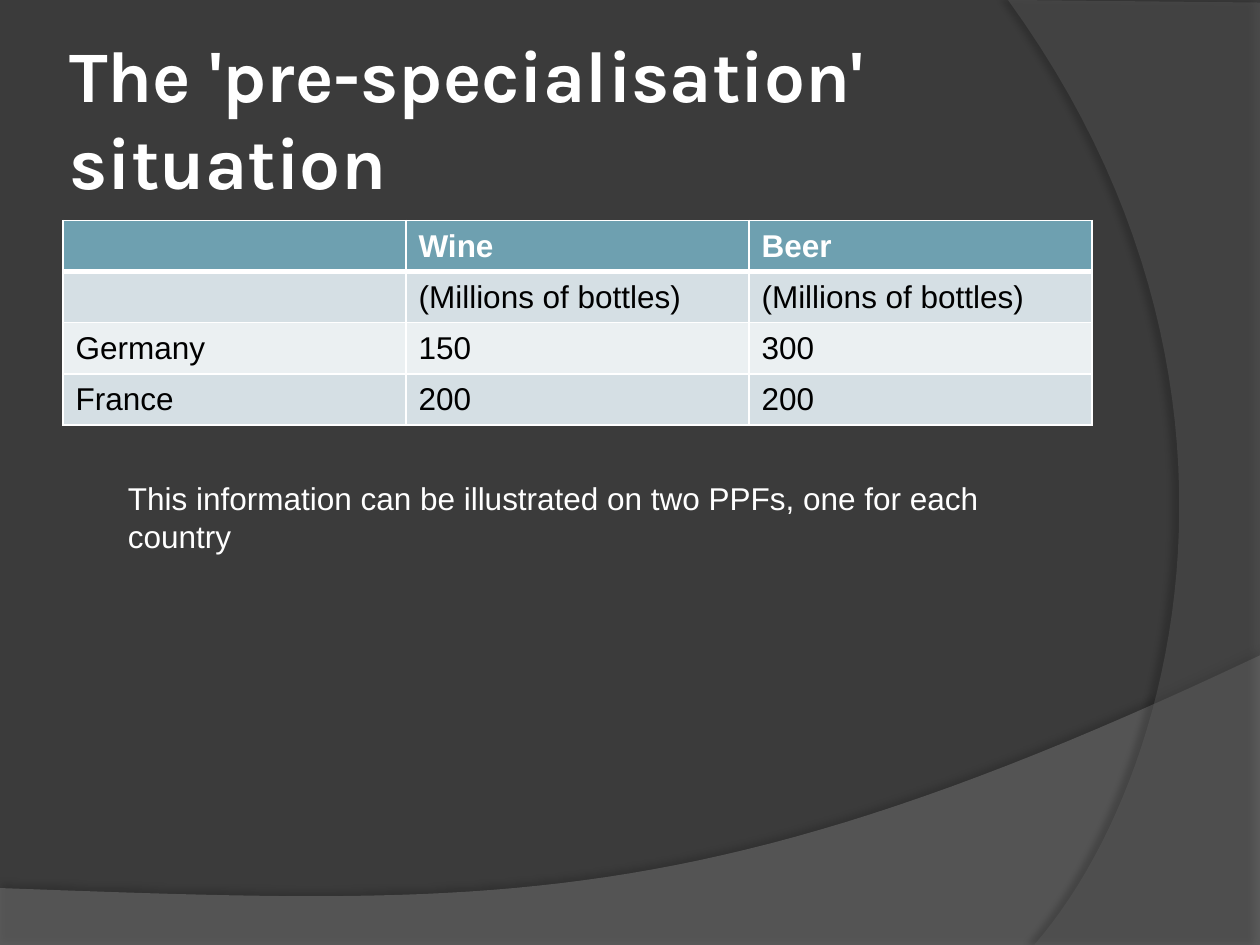
from lxml import etree
from pptx import Presentation
from pptx.dml.color import RGBColor
from pptx.enum import text
from pptx.oxml import parse_xml
from pptx.oxml.ns import nsdecls, qn
from pptx.util import Pt

COLORS = {
    "background": "3B3B3B", "wave": "7F7F7F", "arc": "5E5E5E",
    "shadow": "000000", "white": "FFFFFF", "black": "000000",
    "header": "6EA0B0", "band": "D5DFE4", "plain": "EBF0F2",
}
HEADING_FONT, BODY_FONT = "Karla", "Arial"


def rgb(name):
    return RGBColor.from_string(COLORS[name])


def bezier(p0, p1, p2, p3, steps=48):
    """Points along a cubic curve, without its start point."""
    points = []
    for i in range(1, steps + 1):
        t = i / steps
        weights = ((1 - t) ** 3, 3 * t * (1 - t) ** 2, 3 * t * t * (1 - t), t ** 3)
        points.append(tuple(sum(w * p[axis] for w, p in zip(weights, (p0, p1, p2, p3)))
                            for axis in (0, 1)))
    return points


class SlideBuilder:
    def __init__(self, prs):
        self.slide = prs.slides.add_slide(prs.slide_layouts[5])
        self.shapes = self.slide.shapes
        fill = self.slide.background.fill
        fill.solid()
        fill.fore_color.rgb = rgb("background")

    def add_run(self, p, words, size, color, font=BODY_FONT, bold=False):
        r = p.add_run()
        r.text = words
        r.font.name, r.font.size, r.font.bold = font, Pt(size), bold
        r.font.color.rgb = rgb(color)

    def swoosh(self, points, color, opacity, shadow_opacity, distance, angle):
        corners = [(Pt(x), Pt(y)) for x, y in points]
        builder = self.shapes.build_freeform(*corners[0])
        builder.add_line_segments(corners[1:], close=True)
        sp = builder.convert_to_shape()
        sp.line.fill.background()
        sp.fill.solid()
        sp.fill.fore_color.rgb = rgb(color)
        solid = sp._element.spPr.find(qn("a:solidFill"))
        etree.SubElement(solid[0], qn("a:alpha"), val=str(opacity * 1000))
        sp.shadow.inherit = False
        sp._element.spPr.find(qn("a:effectLst")).append(parse_xml(
            f'<a:outerShdw {nsdecls("a")} blurRad="{Pt(4)}" dist="{Pt(distance)}" '
            f'dir="{angle * 60000}" rotWithShape="0"><a:srgbClr val="{COLORS["shadow"]}">'
            f'<a:alpha val="{shadow_opacity * 1000}"/></a:srgbClr></a:outerShdw>'))

    def title(self, words, left, top, width, height):
        sp = self.shapes.title
        self.shapes._spTree.append(sp._element)  # in front of the swooshes
        sp.left, sp.top, sp.width, sp.height = map(Pt, (left, top, width, height))
        tf = sp.text_frame
        tf.word_wrap, tf.auto_size = True, text.MSO_AUTO_SIZE.NONE
        tf.vertical_anchor = text.MSO_ANCHOR.MIDDLE
        tf.margin_left = tf.margin_right = tf.margin_top = tf.margin_bottom = Pt(3.6)
        p = tf.paragraphs[0]
        p.alignment = text.PP_ALIGN.LEFT
        self.add_run(p, words, 41.4, "white", HEADING_FONT, True)

    def borders(self, cell, widths):
        tc_pr = cell._tc.get_or_add_tcPr()
        for side, width in zip("LRTB", widths):
            tc_pr.append(parse_xml(
                f'<a:ln{side} {nsdecls("a")} w="{Pt(width)}"><a:solidFill>'
                f'<a:srgbClr val="{COLORS["white"]}"/></a:solidFill></a:ln{side}>'))

    def table(self, rows, left, top, width, row_height):
        frame = self.shapes.add_table(len(rows), len(rows[0]), Pt(left), Pt(top),
                                      Pt(width), Pt(row_height * len(rows)))
        for i, row in enumerate(rows):
            header = i == 0
            fill = "header" if header else "band" if i % 2 else "plain"
            for j, words in enumerate(row):
                cell = frame.table.cell(i, j)
                cell.vertical_anchor = text.MSO_ANCHOR.MIDDLE
                self.borders(cell, (1, 1, 3 if i == 1 else 1, 3 if header else 1))
                cell.fill.solid()
                cell.fill.fore_color.rgb = rgb(fill)
                if words:
                    self.add_run(cell.text_frame.paragraphs[0], words, 18,
                                 "white" if header else "black", bold=header)

    def note(self, words, left, top, width, height):
        tf = self.shapes.add_textbox(*map(Pt, (left, top, width, height))).text_frame
        tf.word_wrap = True
        self.add_run(tf.paragraphs[0], words, 18, "white")


def main():
    prs = Presentation()
    prs.slide_width, prs.slide_height = Pt(720), Pt(540)
    s = SlideBuilder(prs)

    # Background swooshes
    wave = [(0, 540.5), (720, 540.5), (720, 374.5)]
    wave += bezier(wave[-1], (402.5, 525), (281.5, 517.5), (0, 507.5))
    s.swoosh(wave, "wave", 45, 35, 3.5, 270)
    arc = [(720, 1.5), (720, 540), (591, 540)]
    arc += bezier(arc[-1], (673, 445.5), (733, 216), (576, 0))
    s.swoosh(arc, "arc", 40, 45, 4, 180)

    # Title
    s.title("The 'pre-specialisation' situation", 36, 21.6, 588, 90)

    # Output of each country
    unit = "(Millions of bottles)"
    s.table([("", "Wine", "Beer"),
             ("", unit, unit),
             ("Germany", "150", "300"),
             ("France", "200", "200")], 36, 126, 588, 29.2)

    # Closing remark
    s.note("This information can be illustrated on two PPFs, one for each country",
           66, 270, 527, 29)

    prs.save("out.pptx")


if __name__ == "__main__":
    main()
